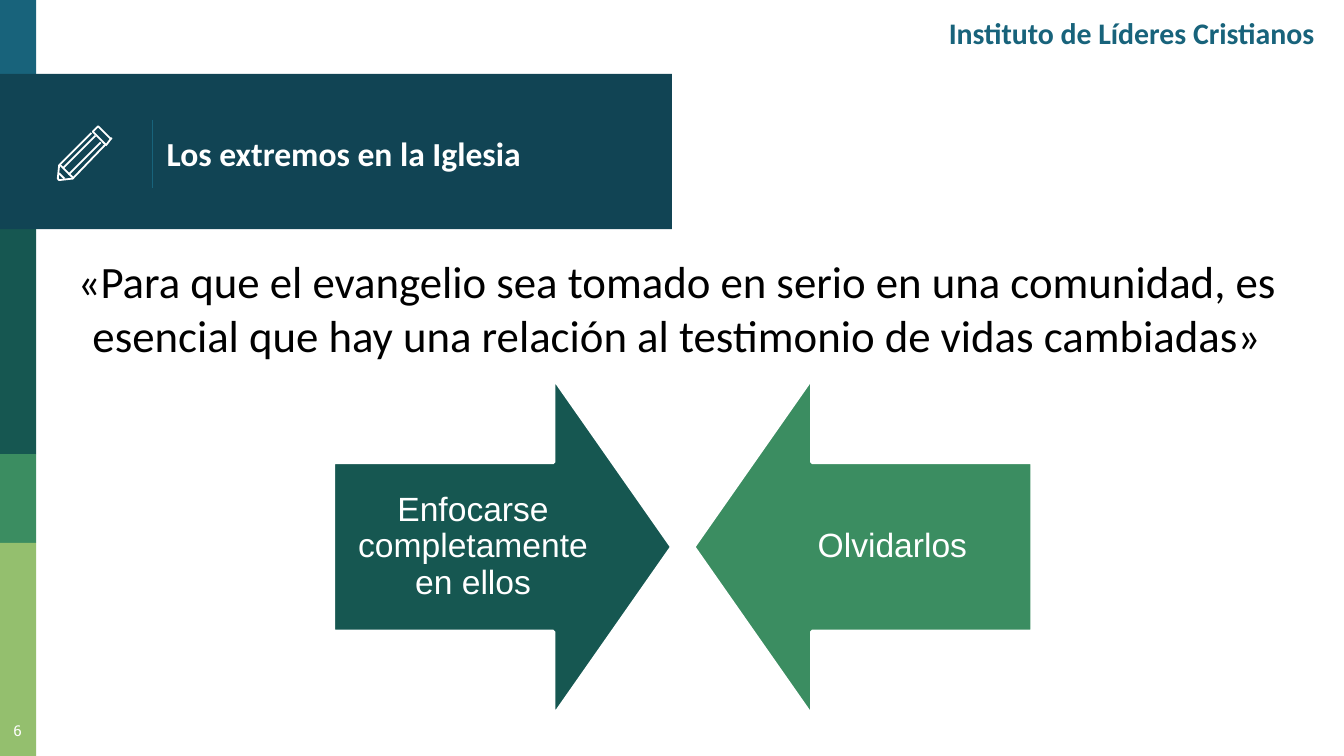
"""Build the slide about the two extremes in the church."""
from lxml.etree import SubElement
from pptx import Presentation
from pptx.dml.color import RGBColor
from pptx.enum.shapes import MSO_CONNECTOR as Connector, MSO_SHAPE as Shape
from pptx.enum.text import MSO_ANCHOR as Anchor, MSO_AUTO_SIZE as AutoSize, PP_ALIGN as Align
from pptx.oxml.ns import qn
from pptx.util import Inches, Pt

COLUMNS, ROWS = 100, 56.25
CELL = Inches(0.1)
WHITE, BLACK = "FFFFFF", "000000"
BLUE, NAVY, TEAL, GREEN, LIME = "18637B", "114454", "165751", "3B8D61", "94BF6E"


def color(hex_code):
    """Turn a hex string into a colour."""
    return RGBColor.from_string(hex_code)


def cells(*counts):
    """Turn grid counts into lengths."""
    return [round(count * CELL) for count in counts]


def write(frame, text, font="Calibri", size=18, ink=WHITE, bold=False,
          align=Align.CENTER, anchor=Anchor.MIDDLE, inset=1, spacing=None):
    """Put formatted text into a text frame."""
    frame.word_wrap = True
    frame.auto_size = AutoSize.NONE
    frame.vertical_anchor = anchor
    margin, = cells(inset)
    frame.margin_left = frame.margin_right = margin
    frame.margin_top = frame.margin_bottom = margin
    paragraph = frame.paragraphs[0]
    paragraph.alignment = align
    if spacing:
        paragraph.line_spacing = spacing
    run = paragraph.add_run()
    run.text = text
    run.font.name, run.font.size, run.font.bold = font, Pt(size), bold
    run.font.color.rgb = color(ink)


class Deck:
    """Hold the style and the current slide."""

    def __init__(self):
        """Open a presentation with one title-only slide."""
        self.show = Presentation()
        self.show.slide_width, self.show.slide_height = cells(COLUMNS, ROWS)
        self.slide = self.show.slides.add_slide(self.show.slide_layouts[5])
        self.shapes = self.slide.shapes

    def block(self, kind, box, fill, edge=None):
        """Add a filled preset shape."""
        block = self.shapes.add_shape(kind, *cells(*box))
        block.shadow.inherit = False
        block.fill.solid()
        block.fill.fore_color.rgb = color(fill)
        if edge:
            block.line.color.rgb, block.line.width = color(edge), Pt(2)
        else:
            block.line.fill.background()
        return block

    def arrow(self, kind, box, fill):
        """Add a wide block arrow."""
        arrow = self.block(kind, box, fill, WHITE)
        arrow.adjustments[0], arrow.adjustments[1] = 0.5, 0.35

    def rule(self, start, end, ink):
        """Add a thin straight line."""
        rule = self.shapes.add_connector(Connector.STRAIGHT, *cells(*start, *end))
        rule.line.color.rgb, rule.line.width = color(ink), Pt(0.75)
        SubElement(rule._element.spPr, qn("a:effectLst"))

    def stroke(self, points, closed=False):
        """Add a white outline through points in tenths of a cell."""
        builder = self.shapes.build_freeform(*points[0], scale=CELL / 10)
        builder.add_line_segments(points[1:], close=closed)
        stroke = builder.convert_to_shape()
        stroke.shadow.inherit = False
        stroke.fill.background()
        stroke.line.color.rgb, stroke.line.width = color(WHITE), Pt(0.96)

    def text(self, content, box, **style):
        """Add a text box."""
        write(self.shapes.add_textbox(*cells(*box)).text_frame, content, **style)

    def title(self, content, box, **style):
        """Place the title placeholder in front of what is drawn so far."""
        title = self.shapes.title
        title.left, title.top, title.width, title.height = cells(*box)
        self.shapes._spTree.append(title._element)
        write(title.text_frame, content, **style)


def main():
    """Draw the slide and save it."""
    deck = Deck()

    side_bars = [(0, 5.8, BLUE), (17, 33.8, TEAL), (33.8, 40.4, GREEN), (40.4, ROWS, LIME)]
    for top, bottom, fill in side_bars:
        deck.block(Shape.RECTANGLE, (0, top, 2.7, bottom - top), fill)
    deck.block(Shape.RECTANGLE, (0, 5.5, COLUMNS / 2, 11.55), NAVY)
    deck.rule((11.35, 8.9), (11.35, 14), BLUE)
    deck.title("Los extremos en la Iglesia", (11.4, 5.8, 37.5, 11.2),
               bold=True, align=Align.LEFT)

    eraser = [(82, 103), (74, 95), (73, 94), (72, 95), (69, 98), (79, 108), (82, 104), (83, 103)]
    body = [(68, 99), (44, 123), (43, 133), (44, 134), (53, 133), (54, 133), (78, 108)]
    tip = [(44, 123), (45, 123), (54, 132), (54, 133)]
    grooves = [[(75, 106), (51, 130)], [(47, 125), (71, 101)]]
    lead = [(48, 133), (44, 129)]
    deck.stroke(eraser, closed=True)
    for part in [body, tip, lead, *grooves]:
        deck.stroke(part)

    deck.text("Instituto de Líderes Cristianos", (61.8, 0, 37, 4.8),
              size=16, ink=BLUE, bold=True, align=Align.RIGHT)
    deck.text("«Para que el evangelio sea tomado en serio en una comunidad, es esencial "
              "que hay una relación al testimonio de vidas cambiadas»",
              (4.3, 17.9, 92.1, 10), size=24, ink=BLACK, anchor=Anchor.TOP)

    extremes = [
        ("Enfocarse completamente en ellos", Shape.RIGHT_ARROW, 24.8, 24.8, TEAL),
        ("Olvidarlos", Shape.LEFT_ARROW, 51.6, 56, GREEN),
    ]
    for label, kind, left, label_left, fill in extremes:
        deck.arrow(kind, (left, 28.1, 25.2, 25.2), fill)
        deck.text(label, (label_left, 34.4, 20.8, 12.6), font="Arial", inset=1.4, spacing=0.9)

    deck.text("6", (-0.6, 52.7, 3.8, 3.5), font="Roboto Slab", size=8, anchor=Anchor.TOP)
    deck.show.save("out.pptx")


if __name__ == "__main__":
    main()
